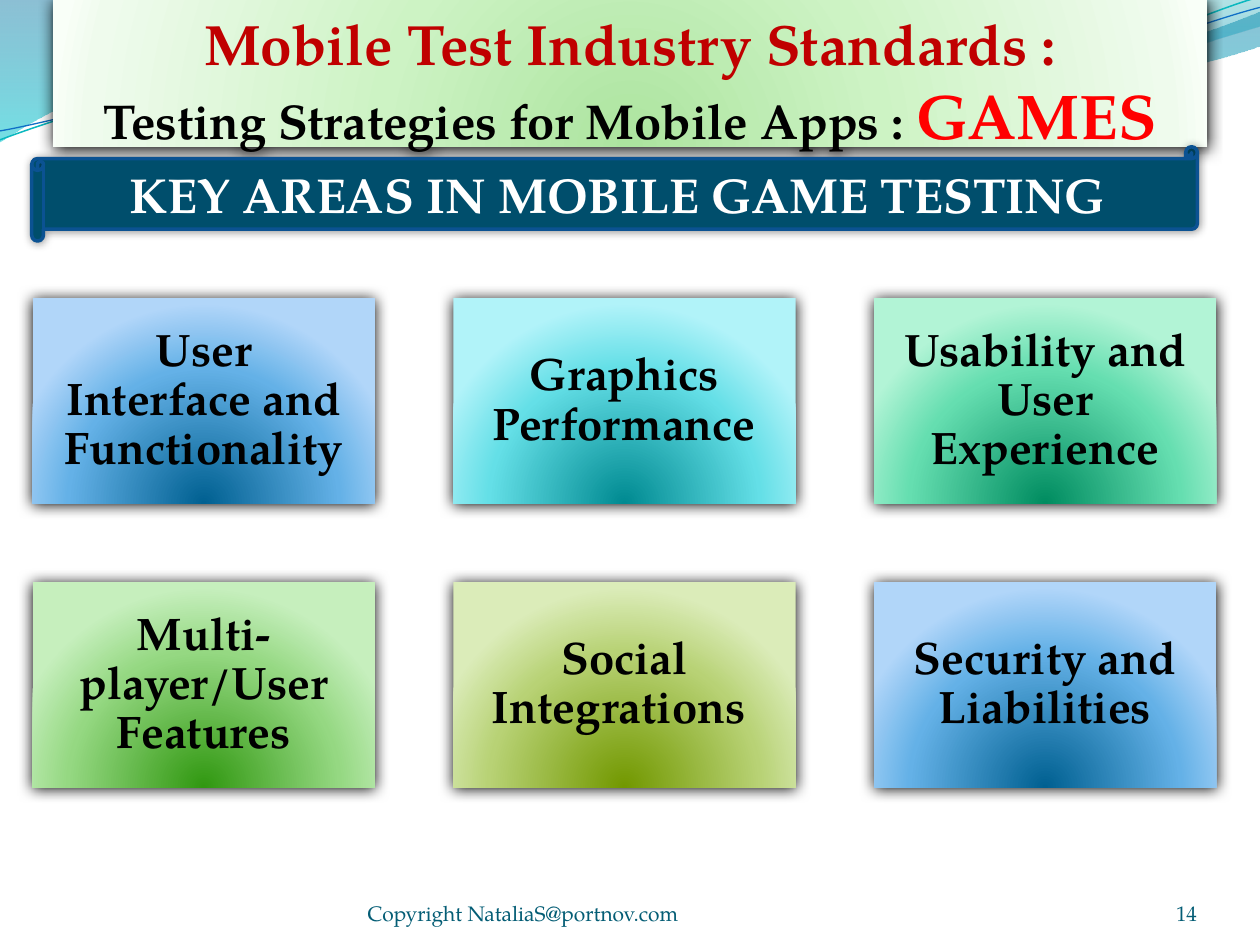
from lxml import etree
from pptx import Presentation
from pptx.dml.color import RGBColor
from pptx.enum.shapes import MSO_SHAPE
from pptx.enum.text import MSO_ANCHOR, PP_ALIGN
from pptx.oxml import parse_xml
from pptx.oxml.ns import nsdecls, qn
from pptx.util import Cm, Pt

FONT = "TeX Gyre Pagella"
COLORS = {
    "black": "000000", "white": "FFFFFF", "crimson": "C00000", "red": "FF0000",
    "scroll": "004E6C", "scroll_edge": "0B5292", "footer": "045D75",
    "wave_teal": "0AB8BF", "wave_blue": "0F6FC6",
}
# Gradient stops: position, colour, opacity (all but the colour in percent)
GRADIENTS = {
    "wave_left": [(0, "0074A1", 45), (100, "00C6CF", 55)],
    "wave_right": [(0, "00A1A9", 30), (80, "008BBF", 45)],
    "title": [(0, "ACE49F", 100), (43, "CDF3C4", 100), (93, "EFFBED", 100), (100, "F9FFF8", 100)],
    "blue": [(0, "006091", 100), (68, "64B1E7", 100), (100, "B1D6F9", 100)],
    "cyan": [(0, "008A91", 100), (68, "64DFE7", 100), (100, "B1F3F9", 100)],
    "mint": [(0, "008C60", 100), (68, "65DEB0", 100), (100, "B2F4D6", 100)],
    "green": [(0, "319811", 100), (68, "95D882", 100), (100, "C6EFBD", 100)],
    "olive": [(0, "729800", 100), (68, "B8D275", 100), (100, "DBECB9", 100)],
}
GLOW_FROM_BELOW = ('<a:path path="circle"><a:fillToRect l="50000" t="130000" '
                   'r="50000" b="-30000"/></a:path>')
TOP_DOWN = '<a:lin ang="5400000" scaled="0"/>'

# Header outlines in cm: start point, then lines (x, y) and cubic curves (three points)
WAVE_BANDS = [
    ("wave_left", (0, 0), [
        (11.18, -0.03), (12.09, 0.43, 16.87, 1.6, 19.25, 1.6),
        (21.67, 1.6, 24.33, 0.66, 25.4, 0.23), (25.43, 0.91),
        (24.97, 1.12, 22.1, 1.93, 18.95, 1.9), (15.8, 1.9, 9.7, 0.71, 6.53, 0.86),
        (3.28, 0.91, 1.17, 2.11, -0.03, 2.87)]),
    ("wave_right", (12.17, -0.03), [
        (12.93, 0.28, 17.32, 1.57, 19.53, 1.65),
        (21.74, 1.75, 24.41, 0.81, 25.4, 0.53), (25.4, 0)]),
]
WAVE_LINES = [
    ("wave_teal", 0.85, (0, 2.82), [
        (1.22, 2.36, 4.01, 1.45, 7.04, 1.32), (10.03, 1.19, 15.06, 2.26, 18.11, 2.03),
        (21.16, 1.8, 23.83, 0.38, 25.35, -0.05)]),
    ("wave_blue", 0.75, (0, 2.64), [
        (1.19, 2.44, 4.17, 1.55, 7.19, 1.42), (10.24, 1.3, 15.16, 2.13, 18.21, 1.91),
        (21.23, 1.7, 23.9, 0.53, 25.4, 0.15)]),
]
KEY_AREAS = [
    ("User Interface and Functionality", "blue"),
    ("Graphics Performance", "cyan"),
    ("Usability and User Experience", "mint"),
    ("Multi-player/User Features", "green"),
    ("Social Integrations ", "olive"),
    ("Security and Liabilities", "blue"),
]


def rgb(name):
    return RGBColor.from_string(COLORS[name])


def fill_gradient(shape, name, direction):
    stops = "".join(
        f'<a:gs pos="{pos * 1000}"><a:srgbClr val="{color}">'
        f'<a:alpha val="{opacity * 1000}"/></a:srgbClr></a:gs>'
        for pos, color, opacity in GRADIENTS[name])
    shape.fill.solid()
    properties = shape.element.spPr
    properties.replace(properties.find(qn("a:solidFill")), parse_xml(
        f'<a:gradFill {nsdecls("a")} rotWithShape="1"><a:gsLst>{stops}</a:gsLst>'
        f'{direction}</a:gradFill>'))


def add_shadow(shape, blur, distance, opacity):
    shape.shadow.inherit = False
    effects = shape.element.spPr.find(qn("a:effectLst"))
    shadow = etree.SubElement(effects, qn("a:outerShdw"), blurRad=str(Pt(blur)),
                              dist=str(Pt(distance)), dir="5400000", rotWithShape="0")
    color = etree.SubElement(shadow, qn("a:srgbClr"), val=COLORS["black"])
    etree.SubElement(color, qn("a:alpha"), val=str(opacity * 1000))


def set_frame(shape, anchor, margins):
    frame = shape.text_frame
    frame.word_wrap = True
    frame.vertical_anchor = anchor
    (frame.margin_left, frame.margin_top,
     frame.margin_right, frame.margin_bottom) = (Cm(m) for m in margins)
    return frame


def style_run(run, size, color, bold=True):
    run.font.name, run.font.size, run.font.bold = FONT, Pt(size), bold
    run.font.color.rgb = rgb(color)


def write_line(paragraph, text, size, color, align=PP_ALIGN.CENTER, bold=True):
    paragraph.text = text
    paragraph.alignment = align
    style_run(paragraph.runs[0], size, color, bold)


def bend_lines(outline, segments):
    """Join the three lines drawn for each curve into one cubic curve."""
    lines = iter(list(outline.element.spPr.iter(qn("a:lnTo"))))
    for segment in segments:
        first = next(lines)
        if len(segment) == 6:
            first.tag = qn("a:cubicBezTo")
            for line in (next(lines), next(lines)):
                first.append(line[0])
                line.getparent().remove(line)


def add_outline(slide, left, top, start, segments, close):
    points = [start] + [segment[i:i + 2] for segment in segments
                        for i in range(0, len(segment), 2)]
    points = [(round(x * 100), round(y * 100)) for x, y in points]
    builder = slide.shapes.build_freeform(*points[0], scale=Cm(0.01))
    builder.add_line_segments(points[1:], close=close)
    outline = builder.convert_to_shape(Cm(left), Cm(top))
    bend_lines(outline, segments)
    outline.shadow.inherit = False
    return outline


def add_header_waves(slide, left, top):
    for gradient, start, segments in WAVE_BANDS:
        band = add_outline(slide, left, top, start, segments, True)
        fill_gradient(band, gradient, TOP_DOWN)
        band.line.fill.background()
    for color, weight, start, segments in WAVE_LINES:
        wave = add_outline(slide, left, top, start, segments, False)
        wave.fill.background()
        wave.line.color.rgb = rgb(color)
        wave.line.width = Pt(weight)


def add_panel(slide, left, top, width, height, gradient):
    panel = slide.shapes.add_shape(MSO_SHAPE.RECTANGLE, Cm(left), Cm(top), Cm(width), Cm(height))
    fill_gradient(panel, gradient, GLOW_FROM_BELOW)
    panel.line.fill.background()
    add_shadow(panel, 8.5, 1, 100)
    return panel


def add_title(slide, left, top, width, height):
    banner = add_panel(slide, left, top, width, height, "title")
    frame = set_frame(banner, MSO_ANCHOR.TOP, (0, 0.18, 0, 0))
    write_line(frame.paragraphs[0], "Mobile Test Industry Standards :", 32.4, "crimson")
    subtitle = frame.add_paragraph()
    write_line(subtitle, "Testing Strategies for Mobile Apps : ", 27.9, "black")
    games = subtitle.add_run()
    games.text = "GAMES"
    style_run(games, 36, "red")


def add_heading_scroll(slide, left, top, width, height):
    scroll = slide.shapes.add_shape(MSO_SHAPE.HORIZONTAL_SCROLL,
                                    Cm(left), Cm(top), Cm(width), Cm(height))
    scroll.fill.solid()
    scroll.fill.fore_color.rgb = rgb("scroll")
    scroll.line.color.rgb = rgb("scroll_edge")
    scroll.line.width = Pt(2)
    add_shadow(scroll, 5, 0, 40)
    frame = set_frame(scroll, MSO_ANCHOR.MIDDLE, (0.25, 0.13, 0.25, 0.13))
    write_line(frame.paragraphs[0], "KEY AREAS IN MOBILE GAME TESTING", 28, "white")


def add_key_areas(slide, left, top, width, height, columns=3, gap=1.58):
    rows = len(KEY_AREAS) // columns
    card_width = (width - gap * (columns - 1)) / columns
    card_height = (height - gap * (rows - 1)) / rows
    for index, (area, gradient) in enumerate(KEY_AREAS):
        row, column = divmod(index, columns)
        card = add_panel(slide, left + column * (card_width + gap),
                         top + row * (card_height + gap), card_width, card_height, gradient)
        frame = set_frame(card, MSO_ANCHOR.MIDDLE, (0.53, 0.5, 0.53, 0.5))
        write_line(frame.paragraphs[0], area, 26, "black")
        frame.paragraphs[0].line_spacing = 0.9


def add_footer(slide, left, top, width, height):
    number_width = 2.11
    parts = [("Copyright NataliaS@portnov.com", left, 9.32, PP_ALIGN.LEFT),
             ("14", left + width - number_width, number_width, PP_ALIGN.RIGHT)]
    for text, part_left, part_width, align in parts:
        note = slide.shapes.add_textbox(Cm(part_left), Cm(top), Cm(part_width), Cm(height))
        frame = set_frame(note, MSO_ANCHOR.BOTTOM, (0,) * 4)
        write_line(frame.paragraphs[0], text, 12, "footer", align, bold=False)


def main():
    presentation = Presentation()
    presentation.slide_width, presentation.slide_height = Cm(25.4), Cm(19.05)
    slide = presentation.slides.add_slide(presentation.slide_layouts[6])
    add_header_waves(slide, 0, 0)
    add_title(slide, 1.06, 0, 23.28, 2.96)
    add_heading_scroll(slide, 0.64, 2.96, 23.5, 1.9)
    add_key_areas(slide, 0.66, 6.01, 23.86, 9.86)
    add_footer(slide, 7.41, 17.65, 16.72, 1.01)
    presentation.save("out.pptx")


if __name__ == "__main__":
    main()
